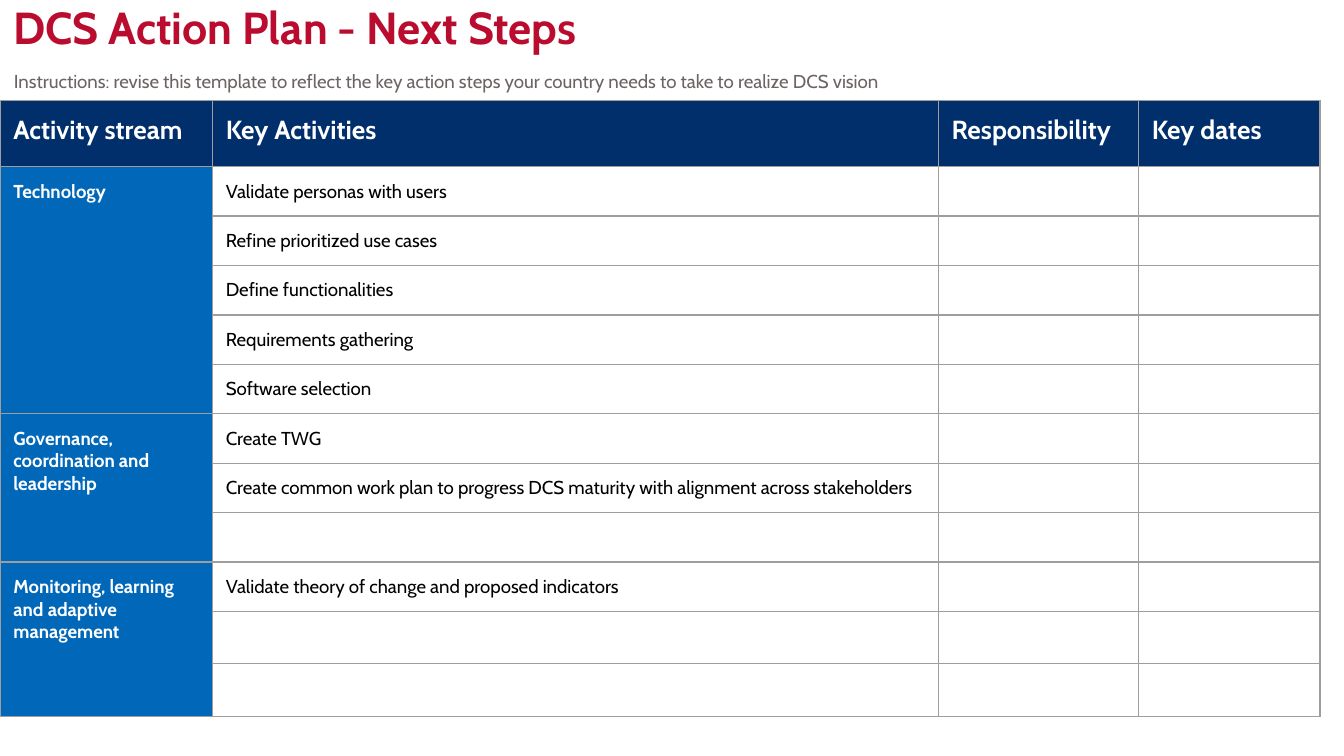
from dataclasses import dataclass

from lxml import etree
from pptx import Presentation
from pptx.dml.color import RGBColor
from pptx.enum.text import MSO_ANCHOR
from pptx.oxml.ns import qn
from pptx.util import Pt

TOP = MSO_ANCHOR.TOP
BOTTOM = MSO_ANCHOR.BOTTOM


@dataclass(frozen=True)
class Theme:
    """Colours, font and sizes of the slide."""
    font: str = "Cabin"
    title: str = "BA0C2F"
    instructions: str = "6C6463"
    header: str = "002F6C"
    stream: str = "0067B9"
    light: str = "FFFFFF"
    dark: str = "000000"
    border: str = "9E9E9E"
    title_size: float = 24
    header_size: float = 14
    body_size: float = 10
    border_width: float = 0.75
    inset: float = 7.2


THEME = Theme()
HEADERS = ["Activity stream", "Key Activities", "Responsibility", "Key dates"]
STREAMS = [
    ("Technology", [
        "Validate personas with users",
        "Refine prioritized use cases",
        "Define functionalities",
        "Requirements gathering",
        "Software selection",
    ]),
    ("Governance, coordination and leadership", [
        "Create TWG",
        "Create common work plan to progress DCS maturity with alignment across stakeholders",
        "",
    ]),
    ("Monitoring, learning and adaptive management", [
        "Validate theory of change and proposed indicators",
        "",
        "",
    ]),
]
COLUMN_WIDTHS = [113.8, 388.8, 107.3, 97.3]
HEADER_HEIGHT = 35.3
ROW_HEIGHT = 26.5
LAST_ROW_HEIGHT = 28.1


def add_run(paragraph, text, size, color, bold=False):
    """Add one styled run to a paragraph."""
    run = paragraph.add_run()
    run.text = text
    run.font.name = THEME.font
    run.font.size = Pt(size)
    run.font.bold = bold
    run.font.color.rgb = RGBColor.from_string(color)


def set_insets(target):
    """Give a cell or text frame the same inset on every side."""
    target.margin_left = target.margin_right = Pt(THEME.inset)
    target.margin_top = target.margin_bottom = Pt(THEME.inset)


def add_text(slide, box, text, size, color, bold=False, anchor=TOP):
    """Place a one-line text box in the given box."""
    shape = slide.shapes.add_textbox(*(Pt(length) for length in box))
    frame = shape.text_frame
    frame.word_wrap = True
    frame.vertical_anchor = anchor
    set_insets(frame)
    add_run(frame.paragraphs[0], text, size, color, bold)


def add_borders(cell):
    """Draw the four borders of a table cell."""
    properties = cell._tc.get_or_add_tcPr()
    for index, side in enumerate(("lnL", "lnR", "lnT", "lnB")):
        line = etree.Element(qn(f"a:{side}"), w=str(Pt(THEME.border_width)))
        fill = etree.SubElement(line, qn("a:solidFill"))
        etree.SubElement(fill, qn("a:srgbClr"), val=THEME.border)
        properties.insert(index, line)


def style_cell(cell, text="", size=THEME.body_size, color=THEME.dark, fill=None):
    """Fill, frame and write one table cell; filled cells are bold."""
    set_insets(cell)
    cell.vertical_anchor = TOP
    if fill:
        cell.fill.solid()
        cell.fill.fore_color.rgb = RGBColor.from_string(fill)
    else:
        cell.fill.background()
    add_borders(cell)
    paragraph = cell.text_frame.paragraphs[0]
    if text:
        add_run(paragraph, text, size, color, bool(fill))
    else:
        end = etree.SubElement(paragraph._p, qn("a:endParaRPr"), sz=str(size * 100))
        etree.SubElement(end, qn("a:latin"), typeface=THEME.font)


def add_plan_table(slide, left, top):
    """Place the action plan table with its merged stream cells."""
    body_count = sum(len(activities) for _, activities in STREAMS)
    heights = [HEADER_HEIGHT] + [ROW_HEIGHT] * (body_count - 2) + [LAST_ROW_HEIGHT] * 2
    table = slide.shapes.add_table(
        len(heights), len(HEADERS), Pt(left), Pt(top),
        Pt(sum(COLUMN_WIDTHS)), Pt(sum(heights)),
    ).table
    table.first_row = table.horz_banding = False
    for column, width in zip(table.columns, COLUMN_WIDTHS):
        column.width = Pt(width)
    for row, height in zip(table.rows, heights):
        row.height = Pt(height)
    for column, header in enumerate(HEADERS):
        style_cell(table.cell(0, column), header, THEME.header_size, THEME.light, THEME.header)

    first = 1
    for stream, activities in STREAMS:
        for offset, activity in enumerate(activities):
            row = first + offset
            name = stream if offset == 0 else ""
            style_cell(table.cell(row, 0), name, color=THEME.light, fill=THEME.stream)
            for column, text in enumerate((activity, "", ""), start=1):
                style_cell(table.cell(row, column), text)
        table.cell(first, 0).merge(table.cell(row, 0))
        first = row + 1


def main():
    """Build and save the action plan slide."""
    presentation = Presentation()
    presentation.slide_width = Pt(720)
    presentation.slide_height = Pt(405)
    slide = presentation.slides.add_slide(presentation.slide_layouts[6])
    add_text(slide, (0, 0, 720, 36), "DCS Action Plan - Next Steps",
             THEME.title_size, THEME.title, True, BOTTOM)
    add_plan_table(slide, 0, 54)
    add_text(slide, (0.4, 32.4, 707.8, 10.8),
             "Instructions: revise this template to reflect the key action steps "
             "your country needs to take to realize DCS vision",
             THEME.body_size, THEME.instructions)
    presentation.save("out.pptx")


if __name__ == "__main__":
    main()
